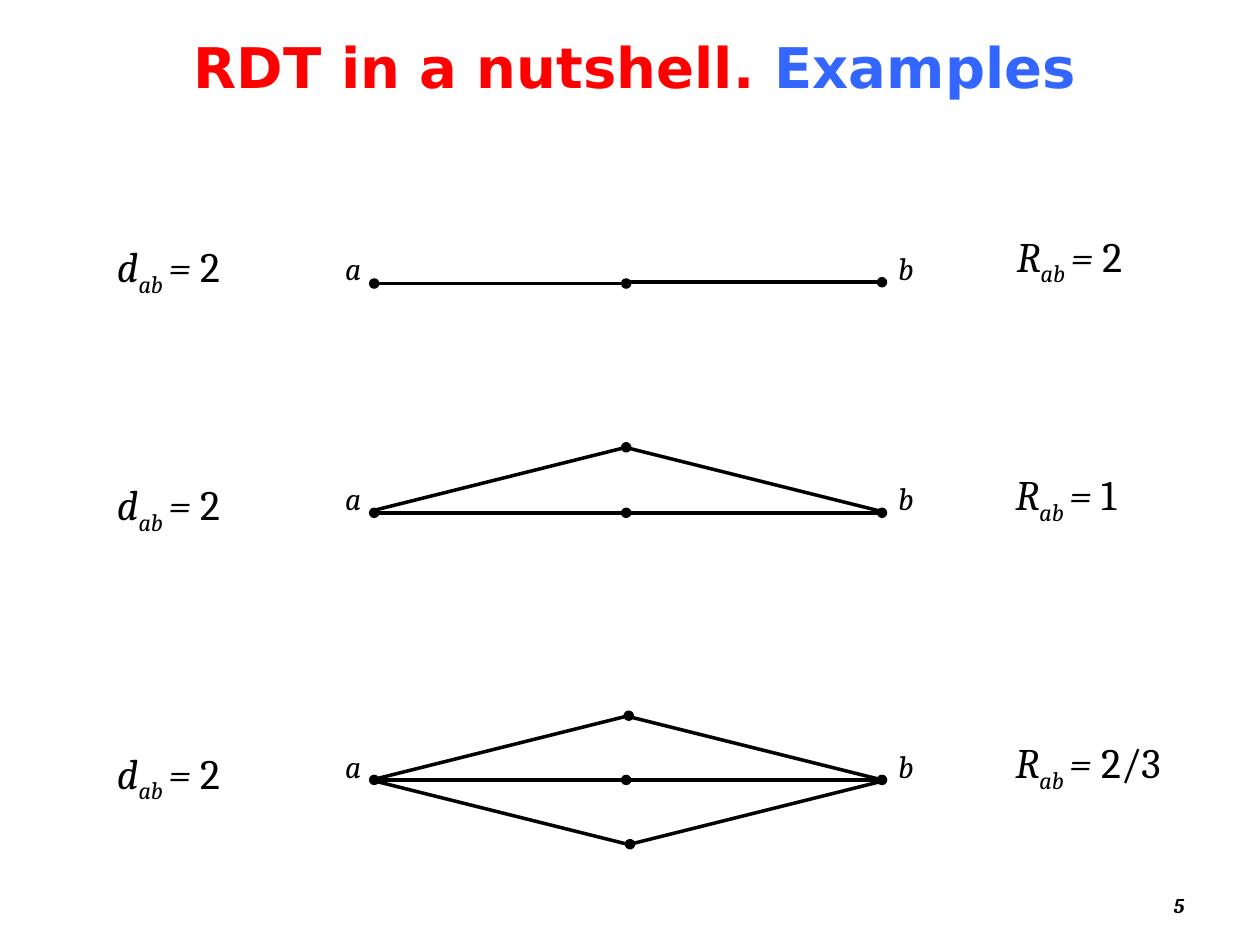
from lxml import etree
from pptx import Presentation
from pptx.dml.color import RGBColor
from pptx.enum import shapes, text
from pptx.oxml import ns
from pptx.util import Inches, Pt

COLORS = {"black": "000000", "red": "FF0000", "blue": "3366FF"}
SERIF = "Cambria"


def add_label(page, left, top, width, height, pieces, size, font=SERIF, wrap=False):
    box = page.shapes.add_textbox(Inches(left), Inches(top), Inches(width), Inches(height))
    box.text_frame.word_wrap = wrap
    para = box.text_frame.paragraphs[0]
    for words, color, bold, italic, baseline in pieces:
        span = para.add_run()
        span.text = words
        span.font.name = font
        span.font.size = Pt(size)
        span.font.bold = bold
        span.font.italic = italic
        span.font.color.rgb = RGBColor.from_string(COLORS[color])
        if baseline:
            span.font._element.set("baseline", str(baseline))
    return box


def add_edge(page, start, end, dots):
    points = [Inches(value) for value in (*start, *end)]
    edge = page.shapes.add_connector(shapes.MSO_CONNECTOR.STRAIGHT, *points)
    edge.line.color.rgb = RGBColor.from_string(COLORS["black"])
    edge.line.width = Pt(2)
    outline = edge.line._get_or_add_ln()
    for dot in dots:
        etree.SubElement(outline, ns.qn(f"a:{dot}End"), type="oval")
    etree.SubElement(edge._element.spPr, ns.qn("a:effectLst"))


deck = Presentation()
deck.slide_width = Inches(10)
deck.slide_height = Inches(7.5)
page = deck.slides.add_slide(deck.slide_layouts[6])

title = add_label(page, 0.51, 0.21, 9.06, 0.71, [
    ("RDT in a nutshell. ", "red", True, False, 0),
    ("Examples", "blue", True, False, 0),
], 32, "DejaVu Sans", True)
title.text_frame.paragraphs[0].alignment = text.PP_ALIGN.CENTER

number = add_label(page, 7.17, 6.83, 2.33, 0.5, [("5", "black", True, True, 0)], 12, wrap=True)
number.text_frame.vertical_anchor = text.MSO_ANCHOR.BOTTOM
number.text_frame.paragraphs[0].alignment = text.PP_ALIGN.RIGHT

BOTH, HEAD, TAIL, NONE = ("head", "tail"), ("head",), ("tail",), ()
examples = [
    (1.93, 1.86, 1.78, 7.97, 1.11, "2", [
        ((2.97, 2.25), (4.97, 2.25), BOTH),
        ((5, 2.24), (7, 2.24), TAIL),
    ]),
    (3.75, 3.75, 3.67, 7.96, 1.11, "1", [
        ((2.97, 4.07), (4.97, 4.07), BOTH),
        ((5, 4.07), (7, 4.07), TAIL),
        ((2.97, 4.05), (4.97, 3.55), TAIL),
        ((5, 3.56), (7, 4.06), NONE),
    ]),
    (5.88, 5.88, 5.8, 7.96, 1.38, "2/3", [
        ((2.97, 6.19), (4.97, 6.19), BOTH),
        ((5, 6.19), (7, 6.19), TAIL),
        ((2.99, 6.18), (4.99, 5.68), TAIL),
        ((5, 6.7), (7, 6.2), HEAD),
        ((5, 5.69), (7, 6.19), NONE),
        ((2.98, 6.2), (4.98, 6.7), NONE),
    ]),
]

for node_top, distance_top, resistance_top, resistance_left, width, resistance, edges in examples:
    for start, end, dots in edges:
        add_edge(page, start, end, dots)
    for name, left in (("a", 2.64), ("b", 7.03)):
        add_label(page, left, node_top, 0.32, 0.4, [(name, "black", False, True, 0)], 18)
    for symbol, value, left, top, label_width in (
        ("d", "2", 0.83, distance_top, 1.05),
        ("R", resistance, resistance_left, resistance_top, width),
    ):
        add_label(page, left, top, label_width, 0.5, [
            (symbol, "black", False, True, 0),
            ("ab ", "black", False, True, -25000),
            ("= ", "black", False, True, 0),
            (value, "black", False, False, 0),
        ], 24)

deck.save("out.pptx")
